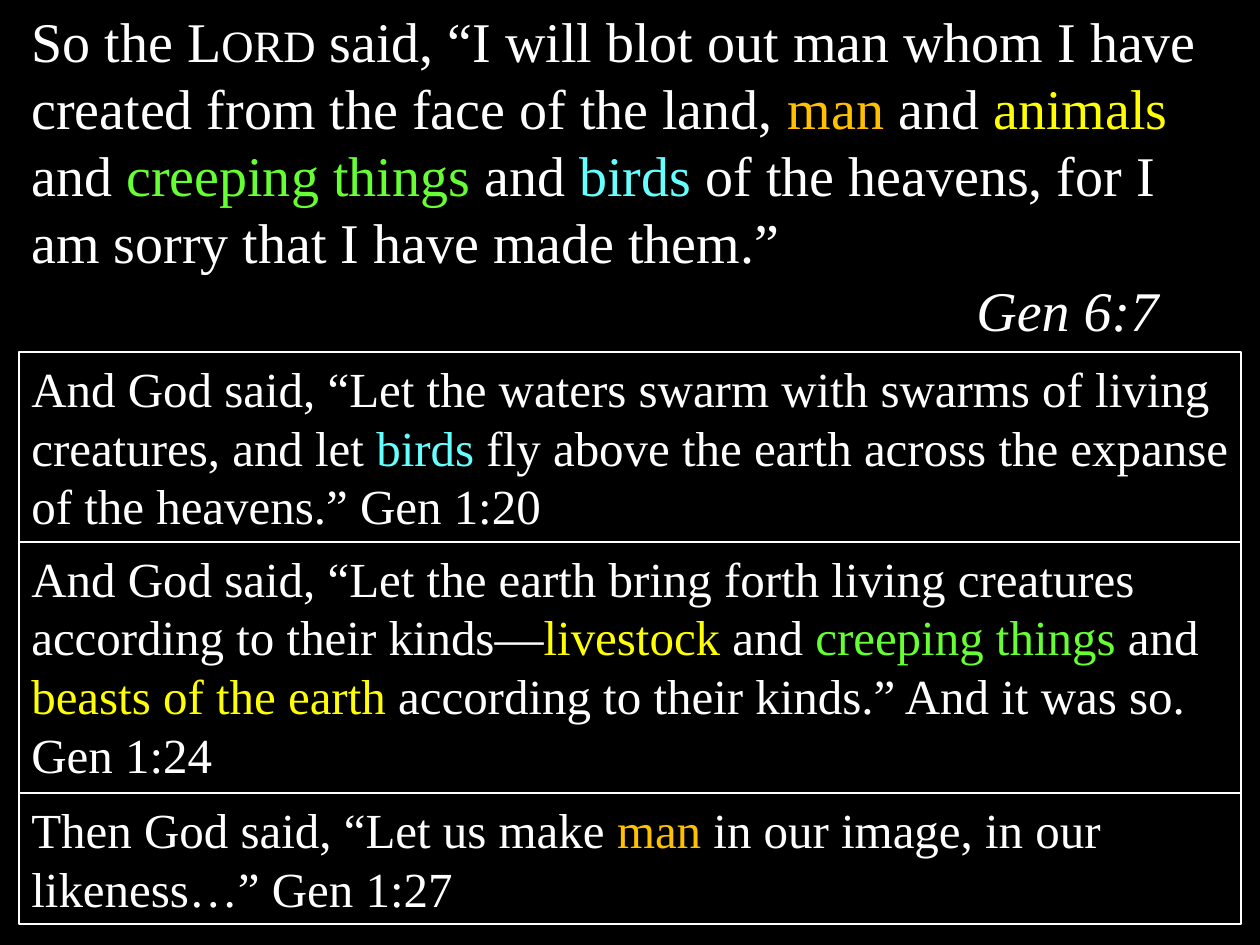
"""Builds a Genesis slide: one verse above three framed creation verses."""
from dataclasses import dataclass

from pptx import Presentation
from pptx.dml.color import RGBColor
from pptx.enum import shapes, text
from pptx.util import Pt

SCALE = 914400 / 126


@dataclass(frozen=True)
class Theme:
    """Colours, font and type sizes."""
    back: str = "000000"
    plain: str = "FFFFFF"
    man: str = "FFC000"
    beast: str = "FFFF00"
    creep: str = "66FF33"
    bird: str = "66FFFF"
    font: str = "Times New Roman"
    large: int = 32
    small: int = 28
    rule: float = 0.75


T = Theme()
LEFT, WIDE = 19, 1222
HEAD = 352

VERSE = [
    ("So the ", {}), ("Lord", {"caps": True}),
    (" said, “I will blot out man whom I have created from the face of the land, ", {}),
    ("man", {"color": T.man}), (" and ", {}),
    ("animals", {"color": T.beast}), (" and ", {}),
    ("creeping things ", {"color": T.creep}), ("and ", {}),
    ("birds ", {"color": T.bird}),
    ("of the heavens, for I am sorry that I have made them.”", {}),
]

FRAMES = [
    (190, [
        ("And God said, “Let the waters swarm with swarms of living creatures, and let ", {}),
        ("birds ", {"color": T.bird}),
        ("fly above the earth across the expanse of the heavens.” Gen 1:20", {}),
    ]),
    (251, [
        ("And God said, “Let the earth bring forth living creatures according to their kinds—", {}),
        ("livestock", {"color": T.beast}), (" and ", {}),
        ("creeping things ", {"color": T.creep}), ("and ", {}),
        ("beasts of the earth ", {"color": T.beast}),
        ("according to their kinds.” And it was so. Gen 1:24", {}),
    ]),
    (131, [
        ("Then God said, “Let us make ", {}), ("man", {"color": T.man}),
        (" in our image, in our likeness…” Gen 1:27", {}),
    ]),
]


def px(n):
    """Turn pixels into EMU."""
    return round(n * SCALE)


def rgb(code):
    """Turn a hex code into a colour."""
    return RGBColor.from_string(code)


def write(para, words, size=T.small, color=T.plain, italic=None, caps=False):
    """Add one formatted run to a paragraph."""
    run = para.add_run()
    run.text = words
    font = run.font
    font.name, font.size, font.italic = T.font, Pt(size), italic
    font.color.rgb = rgb(color)
    if caps:
        run._r.get_or_add_rPr().set("cap", "small")


def fill(para, runs, size):
    """Write a list of runs into a left-aligned paragraph."""
    para.alignment = text.PP_ALIGN.LEFT
    for words, style in runs:
        write(para, words, size=size, **style)


def setup(shape):
    """Wrap the text of a shape from its top and return its frame."""
    frame = shape.text_frame
    frame.word_wrap = True
    frame.vertical_anchor = text.MSO_ANCHOR.TOP
    return frame


def verse(slide):
    """Add the main verse with its reference."""
    frame = setup(slide.shapes.add_textbox(px(LEFT), 0, px(WIDE), px(HEAD)))
    fill(frame.paragraphs[0], VERSE, T.large)
    cite = frame.add_paragraph()
    cite._p.get_or_add_pPr().set("marL", str(px(945)))
    fill(cite, [("Gen 6:7", {"italic": True})], T.large)


def box(slide, top, high, runs):
    """Add one outlined verse."""
    rect = slide.shapes.add_shape(
        shapes.MSO_SHAPE.RECTANGLE, px(LEFT), px(top), px(WIDE), px(high))
    rect.shadow.inherit = False
    rect.fill.background()
    rect.line.color.rgb = rgb(T.plain)
    rect.line.width = Pt(T.rule)
    fill(setup(rect).paragraphs[0], runs, T.small)


def main():
    """Build and save the slide."""
    deck = Presentation()
    deck.slide_width, deck.slide_height = px(1260), px(945)
    slide = deck.slides.add_slide(deck.slide_layouts[6])
    back = slide.background.fill
    back.solid()
    back.fore_color.rgb = rgb(T.back)
    verse(slide)
    top = HEAD
    for high, runs in FRAMES:
        box(slide, top, high, runs)
        top += high
    deck.save("out.pptx")


if __name__ == "__main__":
    main()
